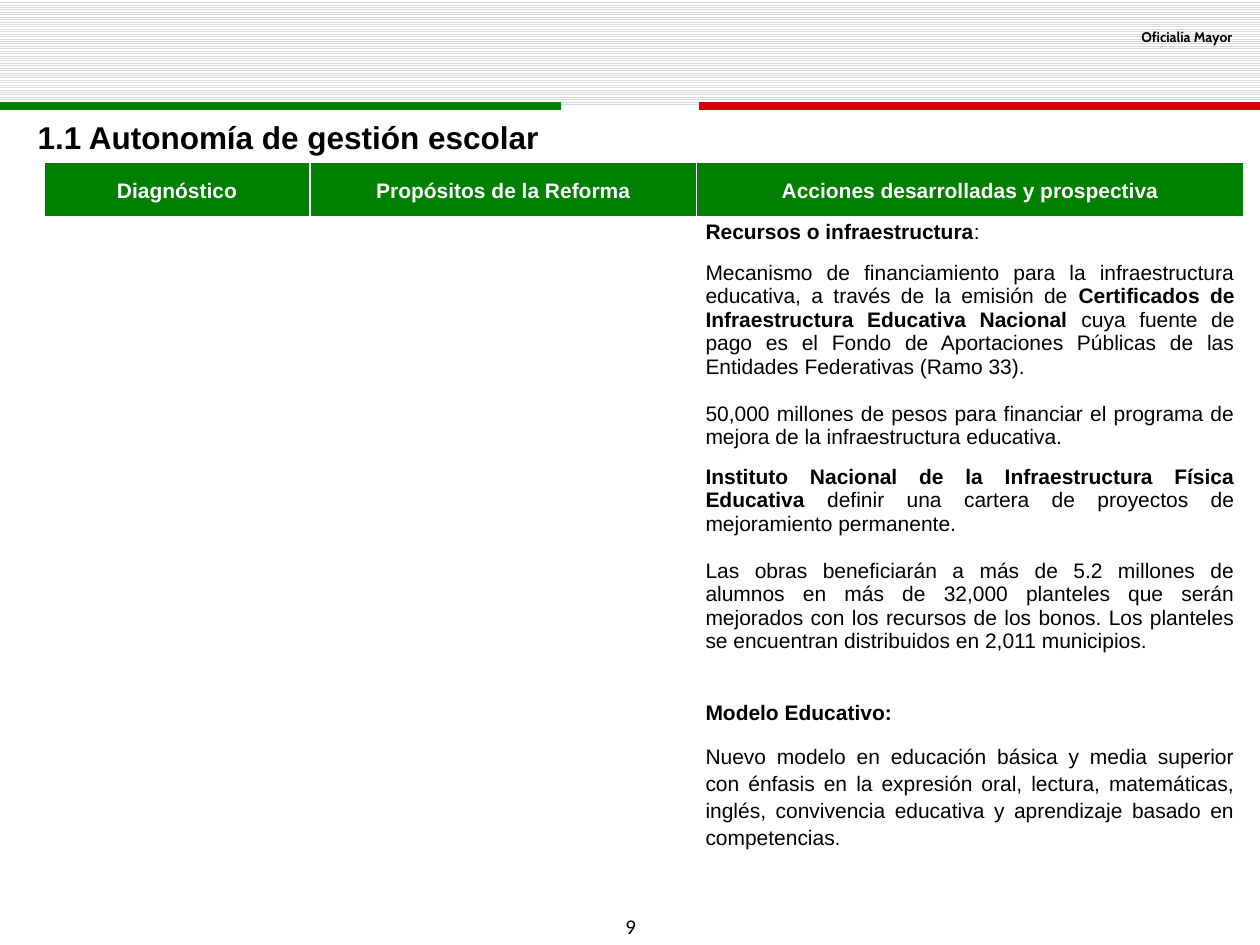
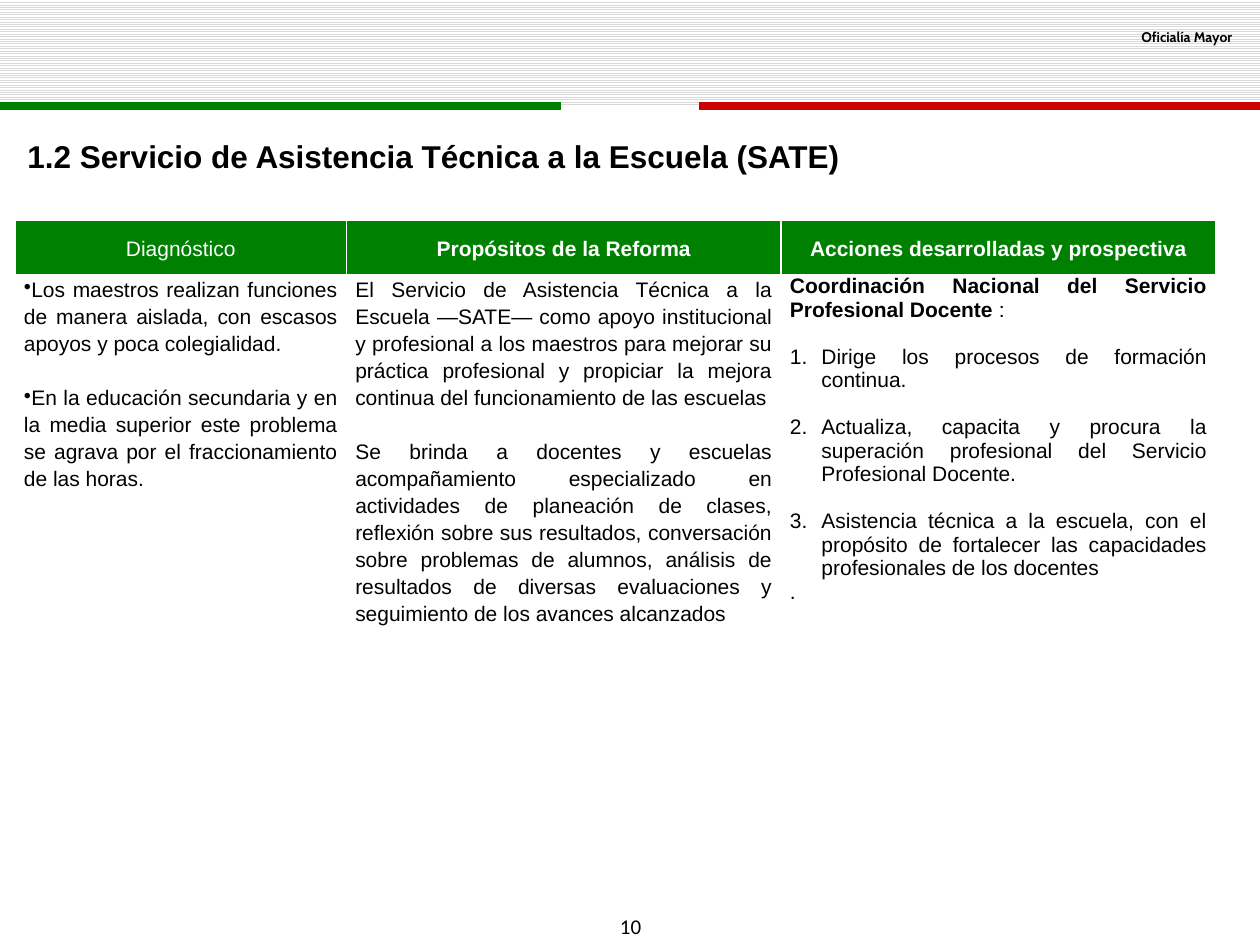
from dataclasses import dataclass

from lxml import etree
from pptx import Presentation
from pptx.dml.color import RGBColor
from pptx.enum.dml import MSO_PATTERN
from pptx.enum.shapes import MSO_CONNECTOR, MSO_SHAPE
from pptx.enum.text import MSO_ANCHOR as Anchor, PP_ALIGN as Align
from pptx.oxml.ns import qn
from pptx.util import Inches, Pt

BLACK = RGBColor(0x00, 0x00, 0x00)
WHITE = RGBColor(0xFF, 0xFF, 0xFF)
GREEN = RGBColor(0x00, 0x80, 0x00)
RED = RGBColor(0xCC, 0x00, 0x00)
STRIPE = RGBColor(0xD9, 0xD9, 0xD9)

BAND_HEIGHT = 0.84
HEADER_HEIGHT = 0.43
BODY_SIZE = 12
WIDE = 1.15          # looser line spacing
SINGLE_GAP = 13.4    # one empty line at single spacing
WIDE_GAP = 15.4      # one empty line at the looser spacing
HEADERS = ["Diagnóstico", "Propósitos de la Reforma", "Acciones desarrolladas y prospectiva"]


@dataclass
class Entry:
    """A paragraph; parts between ** marks are bold."""
    text: str
    after: float = 0
    spacing: float = 1.0
    marker: str = ""
    align: Align = Align.JUSTIFY


class Deck:
    def __init__(self):
        self.presentation = Presentation()
        self.presentation.slide_width = Inches(10)
        self.presentation.slide_height = Inches(7.5)
        self.slide = None

    def new_slide(self, number):
        layout = self.presentation.slide_layouts[6]
        self.slide = self.presentation.slides.add_slide(layout)
        # Striped band with the flag-coloured rule
        band = self.slide.shapes.add_shape(
            MSO_SHAPE.RECTANGLE, 0, 0, Inches(10), Inches(BAND_HEIGHT))
        band.shadow.inherit = False
        band.line.fill.background()
        band.fill.patterned()
        band.fill.pattern = MSO_PATTERN.LIGHT_HORIZONTAL
        band.fill.fore_color.rgb = STRIPE
        band.fill.back_color.rgb = WHITE
        self.rule(5.55, 10, RED)
        self.rule(0, 4.45, GREEN)
        # Office name and page number
        self.text(7.52, 0.18, 2.36, 0.24, Entry("**Oficialía Mayor**", align=Align.RIGHT),
                  size=8, font="Cabin")
        self.text(4.69, 7.2, 0.63, 0.3, Entry(str(number), align=Align.CENTER),
                  size=12, font="Calibri", anchor=Anchor.MIDDLE)

    def rule(self, start, end, color):
        line = self.slide.shapes.add_connector(
            MSO_CONNECTOR.STRAIGHT, Inches(start), Inches(BAND_HEIGHT),
            Inches(end), Inches(BAND_HEIGHT))
        line.line.color.rgb = color
        line.line.width = Pt(4.5)
        properties = line.element.find(qn("p:spPr"))
        etree.SubElement(properties, qn("a:effectLst"))

    def text(self, left, top, width, height, entry, size, font="Arial",
             anchor=Anchor.TOP, wrap=True):
        box = self.slide.shapes.add_textbox(
            Inches(left), Inches(top), Inches(width), Inches(height))
        box.text_frame.word_wrap = wrap
        box.text_frame.vertical_anchor = anchor
        self.fill_text(box.text_frame, [entry], size, font)

    def title(self, left, top, width, title, wrap=True):
        self.text(left, top, width, 0.45, Entry(f"**{title}**", 10, WIDE), 18, wrap=wrap)

    def fill_text(self, frame, entries, size=BODY_SIZE, font="Arial", color=BLACK):
        for index, entry in enumerate(entries):
            paragraph = frame.paragraphs[0] if index == 0 else frame.add_paragraph()
            paragraph.alignment = entry.align
            paragraph.line_spacing = entry.spacing
            paragraph.space_after = Pt(entry.after)
            if entry.marker:
                self.mark(paragraph, entry.marker)
            paragraph.font.size = Pt(size)
            paragraph.font.name = font
            paragraph.font.color.rgb = color
            for part, words in enumerate(entry.text.split("**")):
                if words:
                    run = paragraph.add_run()
                    run.text = words
                    run.font.bold = part % 2 == 1

    def mark(self, paragraph, marker):
        properties = paragraph._p.get_or_add_pPr()
        numbered = marker == "1."
        margin, indent = (0.25, -0.25) if numbered else (0, -0.38)
        properties.set("marL", str(Inches(margin)))
        properties.set("indent", str(Inches(indent)))
        if numbered:
            etree.SubElement(properties, qn("a:buAutoNum"), type="arabicPeriod")
        else:
            etree.SubElement(properties, qn("a:buChar"), char=marker)

    def table(self, left, top, columns, body_heights, headers, body):
        """Green header row over plain rows; body holds the first plain row."""
        heights = [HEADER_HEIGHT] + body_heights
        frame = self.slide.shapes.add_table(
            len(heights), len(columns), Inches(left), Inches(top),
            Inches(sum(columns)), Inches(sum(heights)))
        table = frame.table
        table.first_row = table.horz_banding = False
        for column, width in zip(table.columns, columns):
            column.width = Inches(width)
        for row, height in zip(table.rows, heights):
            row.height = Inches(height)
        for cell in table.iter_cells():
            cell.margin_left = cell.margin_right = Inches(0.07)
            cell.margin_top = cell.margin_bottom = 0
            self.border(cell)
            cell.fill.background()
        for index, (header, entries) in enumerate(zip(headers, body)):
            cell = table.cell(0, index)
            cell.fill.solid()
            cell.fill.fore_color.rgb = GREEN
            cell.vertical_anchor = Anchor.MIDDLE
            self.fill_text(cell.text_frame, [Entry(header, 10, WIDE, align=Align.CENTER)],
                           color=WHITE)
            self.fill_text(table.cell(1, index).text_frame, entries)

    def border(self, cell):
        properties = cell._tc.get_or_add_tcPr()
        for side in "LRTB":
            line = etree.SubElement(properties, qn(f"a:ln{side}"), w=str(Pt(1)))
            fill = etree.SubElement(line, qn("a:solidFill"))
            etree.SubElement(fill, qn("a:srgbClr"), val=str(WHITE))


def build_autonomy(deck):
    deck.new_slide(9)
    deck.title(0.2, 0.84, 4.22, "1.1 Autonomía de gestión escolar", wrap=False)
    actions = [
        Entry("**Recursos o infraestructura**:", 10, WIDE),
        Entry("Mecanismo de financiamiento para la infraestructura educativa, a través de la "
              "emisión de **Certificados de Infraestructura Educativa Nacional **cuya fuente de "
              "pago es el Fondo de Aportaciones Públicas de las Entidades Federativas (Ramo 33).",
              SINGLE_GAP),
        Entry("50,000 millones de pesos para financiar el programa de mejora de la "
              "infraestructura educativa.", 9),
        Entry("**Instituto Nacional de la Infraestructura Física Educativa **definir una cartera "
              "de proyectos de mejoramiento permanente.", SINGLE_GAP),
        Entry("Las obras beneficiarán a más de 5.2 millones de alumnos en más de 32,000 "
              "planteles que serán mejorados con los recursos de los bonos. Los planteles se "
              "encuentran distribuidos en 2,011 municipios.", WIDE_GAP + 10),
        Entry("**Modelo Educativo:**", 10, WIDE),
        Entry("Nuevo modelo en educación básica y media superior con énfasis en la expresión "
              "oral, lectura, matemáticas, inglés, convivencia educativa y aprendizaje basado "
              "en competencias.", 10, WIDE),
    ]
    headers = [f"**{header}**" for header in HEADERS]
    deck.table(0.35, 1.29, [2.11, 3.07, 4.34], [5.34], headers, [[], [], actions])


def build_assistance(deck):
    deck.new_slide(10)
    deck.title(0.12, 0.99, 7.56, "1.2 Servicio de Asistencia Técnica a la Escuela (SATE)")
    diagnosis = [
        Entry("Los maestros realizan funciones de manera aislada, con escasos apoyos y poca "
              "colegialidad.", WIDE_GAP, WIDE, "•"),
        Entry("En la educación secundaria y en la media superior este problema se agrava por "
              "el fraccionamiento de las horas.", 0, WIDE, "•"),
    ]
    purposes = [
        Entry("El Servicio de Asistencia Técnica a la Escuela —SATE— como apoyo institucional "
              "y profesional a los maestros para mejorar su práctica profesional y propiciar la "
              "mejora continua del funcionamiento de las escuelas", WIDE_GAP, WIDE),
        Entry("Se brinda a docentes y escuelas acompañamiento especializado en actividades de "
              "planeación de clases, reflexión sobre sus resultados, conversación sobre "
              "problemas de alumnos, análisis de resultados de diversas evaluaciones y "
              "seguimiento de los avances alcanzados", 0, WIDE),
    ]
    actions = [
        Entry("**Coordinación Nacional del Servicio Profesional Docente** :", SINGLE_GAP),
        Entry("Dirige los procesos de formación continua.", SINGLE_GAP, marker="1."),
        Entry("Actualiza, capacita y procura la superación profesional del Servicio "
              "Profesional Docente.", SINGLE_GAP, marker="1."),
        Entry("Asistencia técnica a la escuela, con el propósito de fortalecer las capacidades "
              "profesionales de los docentes", marker="1."),
        Entry(".", align=Align.LEFT),
    ]
    headers = HEADERS[:1] + [f"**{header}**" for header in HEADERS[1:]]
    deck.table(0.12, 1.75, [2.63, 3.45, 3.45], [3.04, 0.43], headers,
               [diagnosis, purposes, actions])


def main():
    deck = Deck()
    build_autonomy(deck)
    build_assistance(deck)
    deck.presentation.save("out.pptx")


if __name__ == "__main__":
    main()
